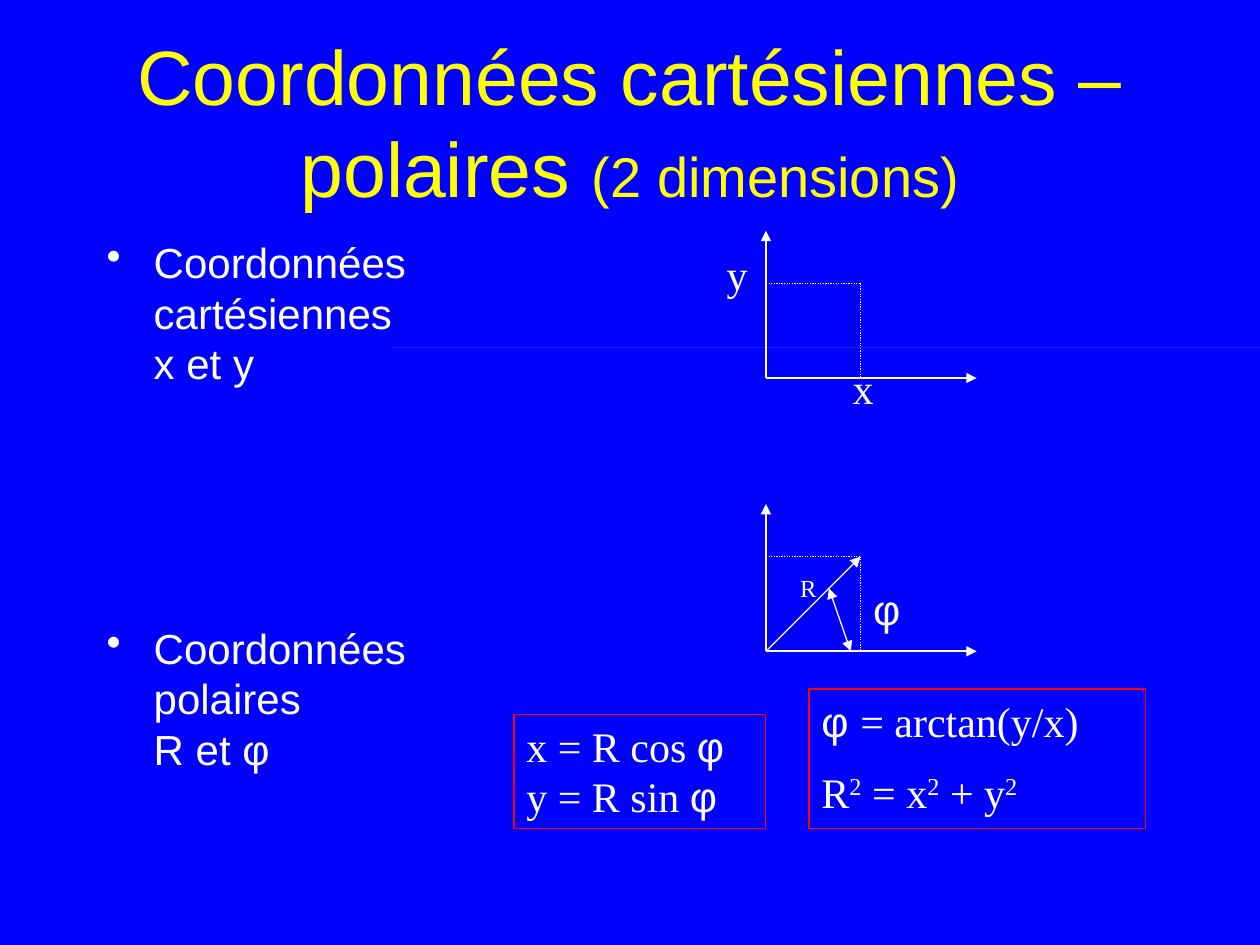
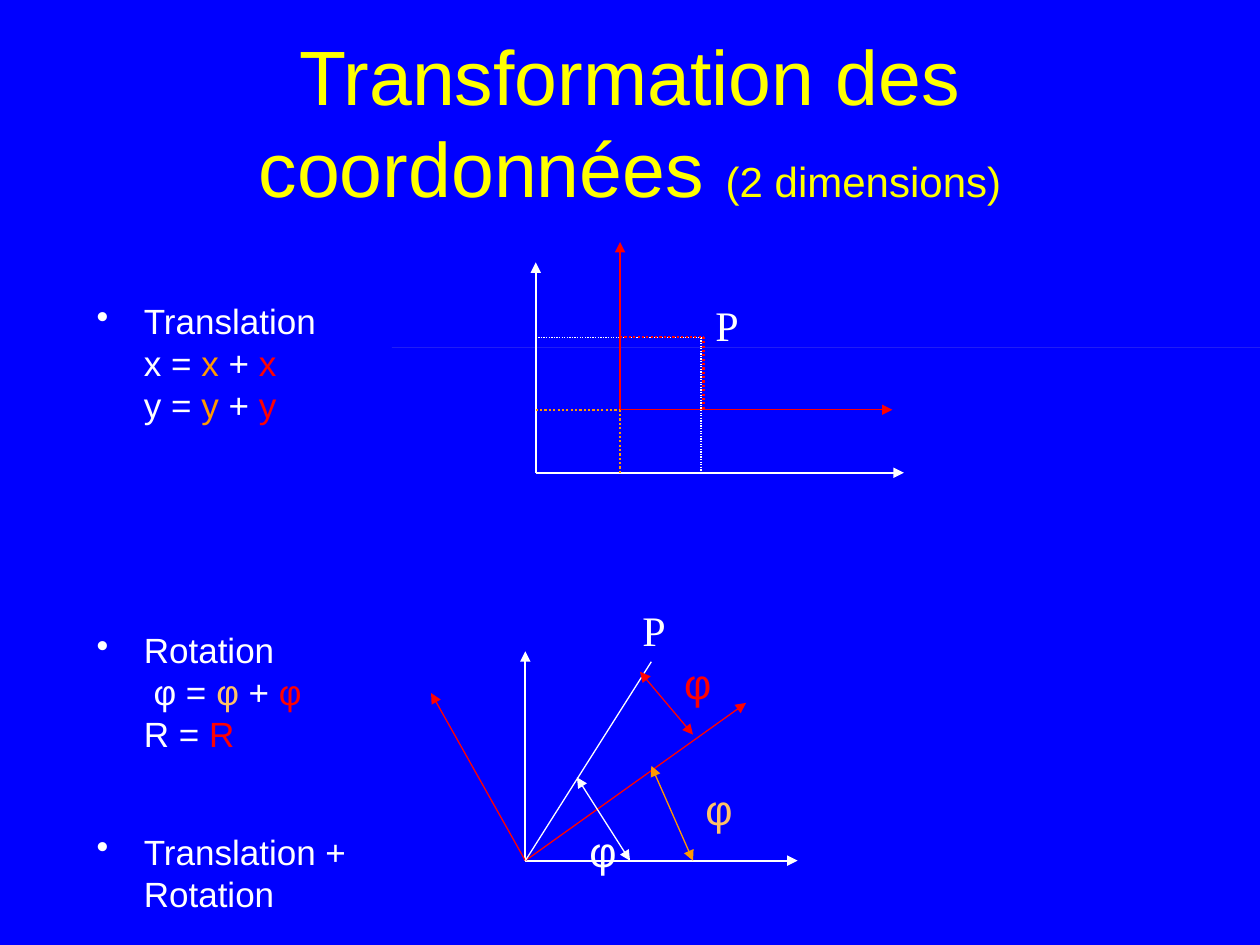
"""Two slides on Cartesian and polar coordinates and their transformations."""
from dataclasses import dataclass

from lxml.etree import SubElement
from pptx import Presentation
from pptx.dml.color import RGBColor
from pptx.enum.dml import MSO_LINE
from pptx.enum.shapes import MSO_CONNECTOR, MSO_SHAPE
from pptx.enum.text import MSO_ANCHOR, PP_ALIGN
from pptx.oxml.ns import qn
from pptx.util import Cm, Pt


@dataclass(frozen=True)
class Theme:
    """Colours, faces, type sizes and line widths."""
    ground: str = "0000FF"
    title: str = "FFFF00"
    white: str = "FFFFFF"
    red: str = "FF0000"
    orange: str = "FF9900"
    peach: str = "FFC266"
    band: str = "FFEAB3"
    sans: str = "Arial"
    serif: str = "Times New Roman"
    head: int = 44
    large: int = 32
    text: int = 24
    list: int = 20
    small: int = 14
    thin: float = 0.75
    thick: float = 1.25


T = Theme()
SERIF = {"face": T.serif}
SUPER = {"face": T.serif, "base": 30}
RED, ORANGE, PEACH = ({"hue": hue} for hue in (T.red, T.orange, T.peach))
BREAK = ("\n", {})


def frame(start, reach=None, corner=None, hue=T.white, axis=T.thick, dots=T.thin):
    """Describe axes and the dotted guides to a point."""
    return {"start": start, "reach": reach, "corner": corner,
            "hue": hue, "axis": axis, "dots": dots}


SLIDES = [
    {
        "title": [("Coordonnées cartésiennes – polaires ", {}),
                  ("(2 dimensions)", {"size": T.large})],
        "body": (1.9, 4.65, T.text, [
            (0, [("Coordonnées cartésiennes", {}), BREAK, ("x et y", {})]),
            (134, [("Coordonnées polaires", {}), BREAK, ("R et φ", {})]),
        ]),
        "frames": [frame((15.44, top), (4.25, 2.97), (1.91, 1.91))
                   for top in (7.62, 13.13)],
        "rays": [(15.44, 13.13, 17.35, 11.22, T.white, "tail")],
        "spans": [(16.71, 11.86, 17.15, 13.13, T.white)],
        "labels": [
            ("x", 16.94, 7.19, SERIF),
            ("y", 14.4, 4.88, SERIF),
            ("R", 15.88, 11.43, {"face": T.serif, "size": T.small}),
            ("φ", 17.35, 11.63, {}),
        ],
        "cards": [
            (10.36, 14.4, 5.08, 2.31, [
                (0, [("x = R cos ", SERIF), ("φ", {}), BREAK,
                     ("y = R sin ", SERIF), ("φ", {})]),
            ]),
            (16.31, 13.89, 6.78, 2.82, [
                (0, [("φ ", {}), ("= arctan(y/x)", SERIF)]),
                (12, [("R", SERIF), ("2", SUPER), (" = x", SERIF), ("2", SUPER),
                      (" + y", SERIF), ("2", SUPER)]),
            ]),
        ],
    },
    {
        "title": [("Transformation des coordonnées ", {}),
                  ("(2 dimensions)", {"size": T.text})],
        "body": (1.7, 5.92, T.list, [
            (0, [("Translation", {}),
                 BREAK, ("x = ", {}), ("x", ORANGE), (" + ", {}), ("x", RED),
                 BREAK, ("y = ", {}), ("y", ORANGE), (" + ", {}), ("y", RED)]),
            (116, [("Rotation", {}),
                   BREAK, (" φ = ", {}), ("φ", PEACH), (" + ", {}), ("φ", RED),
                   BREAK, ("R =", {}), (" R", RED)]),
            (43, [("Translation + Rotation", {})]),
        ]),
        "frames": [
            frame((10.8, 9.53), (7.42, 4.24), (3.33, 2.72)),
            frame((12.5, 8.26), (5.49, 3.38), (1.68, 1.47), T.red, T.thin, T.thick),
            frame((10.8, 9.53), None, (1.7, 1.27), T.orange, dots=T.thick),
            frame((10.59, 17.35), (5.49, 4.22)),
        ],
        "rays": [
            (10.59, 17.35, 15.04, 14.17, T.red, "tail"),
            (10.59, 17.35, 8.69, 13.97, T.red, "tail"),
            (10.59, 17.35, 13.13, 13.34, T.white, ""),
        ],
        "spans": [
            (11.63, 15.67, 12.7, 17.35, T.white),
            (12.9, 13.54, 13.97, 14.81, T.red),
            (13.13, 15.44, 13.97, 17.35, T.orange),
        ],
        "labels": [
            ("P", 14.17, 5.92, SERIF),
            ("φ", 11.63, 16.51, {}),
            ("φ", 13.97, 15.67, PEACH),
            ("φ", 13.54, 13.13, RED),
            ("P", 12.7, 12.07, SERIF),
        ],
        "cards": [],
    },
]


def paint(run, face=T.sans, size=T.text, hue=T.white, base=0):
    """Format one run."""
    font = run.font
    font.name, font.size = face, Pt(size)
    font.color.rgb = RGBColor.from_string(hue)
    if base:
        run._r.get_or_add_rPr().set("baseline", str(base * 1000))


def fill_text(shape, paras, bullet=False, align=PP_ALIGN.LEFT, **look):
    """Write paragraphs of (space before, runs) into a shape."""
    text = shape.text_frame
    text.word_wrap = True
    for index, (gap, runs) in enumerate(paras):
        para = text.add_paragraph() if index else text.paragraphs[0]
        para.alignment = align
        para.space_before = Pt(gap)
        if bullet:
            props = para._p.get_or_add_pPr()
            props.set("marL", str(Cm(0.95)))
            props.set("indent", str(-Cm(0.95)))
            SubElement(props, qn("a:buChar")).set("char", "•")
        for words, style in runs:
            if words == "\n":
                para.add_line_break()
            else:
                run = para.add_run()
                run.text = words
                paint(run, **{**look, **style})
    return text


def add_box(slide, *place):
    """Add a text box at a place in centimetres."""
    return slide.shapes.add_textbox(*map(Cm, place))


def add_rect(slide, *place):
    """Add a plain rectangle without shadow."""
    rect = slide.shapes.add_shape(MSO_SHAPE.RECTANGLE, *map(Cm, place))
    rect.shadow.inherit = False
    return rect


def add_line(slide, ends, hue, width=T.thin, tips="", dotted=False):
    """Draw a line, with arrowheads at the named tips."""
    line = slide.shapes.add_connector(MSO_CONNECTOR.STRAIGHT, *map(Cm, ends))
    line.line.color.rgb = RGBColor.from_string(hue)
    line.line.width = Pt(width)
    if dotted:
        line.line.dash_style = MSO_LINE.ROUND_DOT
    props = line._element.spPr
    for tip in tips.split():
        SubElement(props.find(qn("a:ln")), qn(f"a:{tip}End")).set("type", "triangle")
    SubElement(props, qn("a:effectLst"))


def add_frame(slide, start, reach, corner, hue, axis, dots):
    """Draw axes from the start and guides to the corner."""
    x, y = start
    if reach:
        for end in ((x + reach[0], y), (x, y - reach[1])):
            add_line(slide, (x, y, *end), hue, axis, "tail")
    if corner:
        right, top = x + corner[0], y - corner[1]
        for ends in ((x, top, right, top), (right, top, right, y)):
            add_line(slide, ends, hue, dots, dotted=True)


def add_base(slide, title):
    """Set the ground, the title and the hairline band."""
    ground = slide.background.fill
    ground.solid()
    ground.fore_color.rgb = RGBColor.from_string(T.ground)
    text = fill_text(add_box(slide, 1.9, 0.85, 21.6, 3.17), [(0, title)],
                     align=PP_ALIGN.CENTER, size=T.head, hue=T.title)
    text.vertical_anchor = MSO_ANCHOR.MIDDLE
    band = add_rect(slide, 7.9, 7.01, 17.5, 0)
    band.fill.solid()
    band.fill.fore_color.rgb = RGBColor.from_string(T.band)
    band.line.fill.background()


def add_card(slide, left, top, width, height, paras):
    """Add a red outlined box of formulas."""
    card = add_rect(slide, left, top, width, height)
    card.fill.background()
    card.line.color.rgb = RGBColor.from_string(T.red)
    card.line.width = Pt(T.thin)
    fill_text(card, paras).vertical_anchor = MSO_ANCHOR.TOP


def build(slide, data):
    """Lay out one slide from its data."""
    add_base(slide, data["title"])
    left, top, size, paras = data["body"]
    fill_text(add_box(slide, left, top, 7.82, 11.43), paras, bullet=True, size=size)
    for item in data["frames"]:
        add_frame(slide, **item)
    for *ends, hue, tips in data["rays"]:
        add_line(slide, ends, hue, tips=tips)
    for *ends, hue in data["spans"]:
        add_line(slide, ends, hue, tips="head tail")
    for words, x, y, style in data["labels"]:
        fill_text(add_box(slide, x, y, 1.07, 1.27), [(0, [(words, style)])])
    for card in data["cards"]:
        add_card(slide, *card)


def main():
    """Build and save the deck."""
    deck = Presentation()
    deck.slide_width, deck.slide_height = Cm(25.4), Cm(19.05)
    for data in SLIDES:
        build(deck.slides.add_slide(deck.slide_layouts[6]), data)
    deck.save("out.pptx")


if __name__ == "__main__":
    main()
